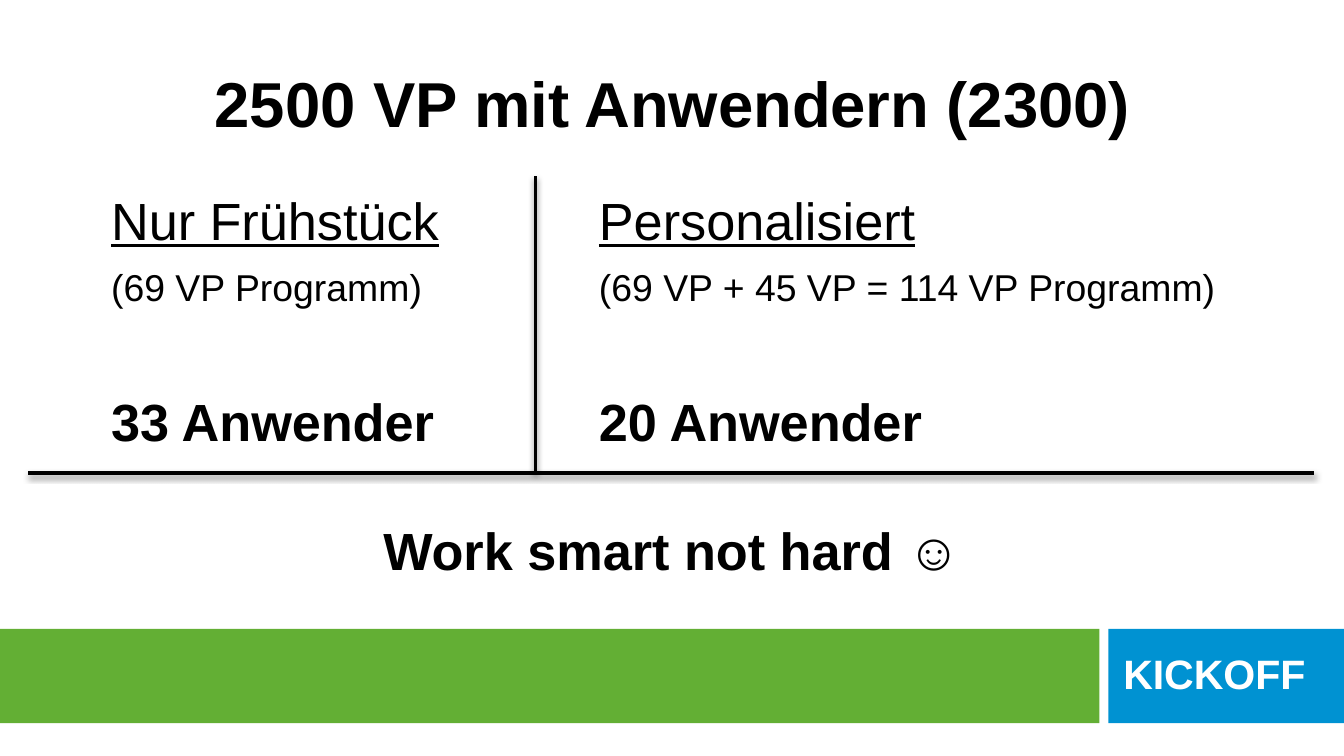
from lxml import etree
from pptx import Presentation
from pptx import util as u
from pptx.dml.color import RGBColor
from pptx.enum import shapes, text
from pptx.oxml.ns import qn

COLORS = {"green": "63AF34", "blue": "0092D2", "black": "000000", "white": "FFFFFF"}

deck = Presentation()
deck.slide_width, deck.slide_height = u.Cm(25.4), u.Cm(14.29)
page = deck.slides.add_slide(deck.slide_layouts[6])


def add_text(left, top, width, height, lines, align=text.PP_ALIGN.LEFT, color="black"):
    """Each line is (wording, size, bold, underline, points before)."""
    box = page.shapes.add_textbox(u.Cm(left), u.Cm(top), u.Cm(width), u.Cm(height))
    frame = box.text_frame
    frame.word_wrap = True
    for index, (wording, size, bold, underline, before) in enumerate(lines):
        para = frame.add_paragraph() if index else frame.paragraphs[0]
        para.alignment = align
        if before:
            para.space_before = u.Pt(before)
        span = para.add_run()
        span.text = wording
        span.font.name = "Arial"
        span.font.size = u.Pt(size)
        span.font.bold = bold
        span.font.underline = underline
        span.font.color.rgb = RGBColor.from_string(COLORS[color])
    return frame


# Footer band
for left, width, color in [(0, 20.78, "green"), (20.95, 4.45, "blue")]:
    band = page.shapes.add_shape(
        shapes.MSO_SHAPE.RECTANGLE, u.Cm(left), u.Cm(11.89), u.Cm(width), u.Cm(1.78))
    band.shadow.inherit = False
    band.fill.solid()
    band.fill.fore_color.rgb = RGBColor.from_string(COLORS[color])
    band.line.fill.background()
label = add_text(20.98, 12.32, 4.42, 1.02, [("KICKOFF", 22, True, False, 0)], color="white")
label.paragraphs[0].line_spacing = 0.8

# Title
title = add_text(2.34, 0.74, 20.75, 2.39, [("2500 VP mit Anwendern (2300)", 34, True, False, 0)],
                 text.PP_ALIGN.CENTER)
title.vertical_anchor = text.MSO_ANCHOR.MIDDLE

# Two options side by side
options = [
    (1.85, 6.86, "Nur Frühstück", "(69 VP Programm)", "33 Anwender"),
    (11.07, 12.6, "Personalisiert", "(69 VP + 45 VP = 114 VP Programm)", "20 Anwender"),
]
for left, width, heading, program, users in options:
    add_text(left, 3.43, width, 8.4, [
        (heading, 28, False, True, 0),
        (program, 20, False, False, 7),
        (users, 28, True, False, 43),
    ])

# Dividing lines with a soft shadow below
for x1, y1, x2, y2 in [(10.12, 3.33, 10.12, 8.94), (0.53, 8.94, 24.84, 8.94)]:
    divider = page.shapes.add_connector(
        shapes.MSO_CONNECTOR.STRAIGHT, u.Cm(x1), u.Cm(y1), u.Cm(x2), u.Cm(y2))
    divider.line.color.rgb = RGBColor.from_string(COLORS["black"])
    divider.line.width = u.Pt(2)
    effects = etree.SubElement(divider._element.spPr, qn("a:effectLst"))
    shadow = etree.SubElement(effects, qn("a:outerShdw"), blurRad=str(u.Pt(3.1)),
                              dist=str(u.Pt(1.6)), dir="5400000", rotWithShape="0")
    tint = etree.SubElement(shadow, qn("a:srgbClr"), val=COLORS["black"])
    etree.SubElement(tint, qn("a:alpha"), val="38000")

# Motto
add_text(0, 9.68, 25.4, 1.45, [("Work smart not hard ☺", 28, True, False, 0)],
         text.PP_ALIGN.CENTER)

deck.save("out.pptx")
